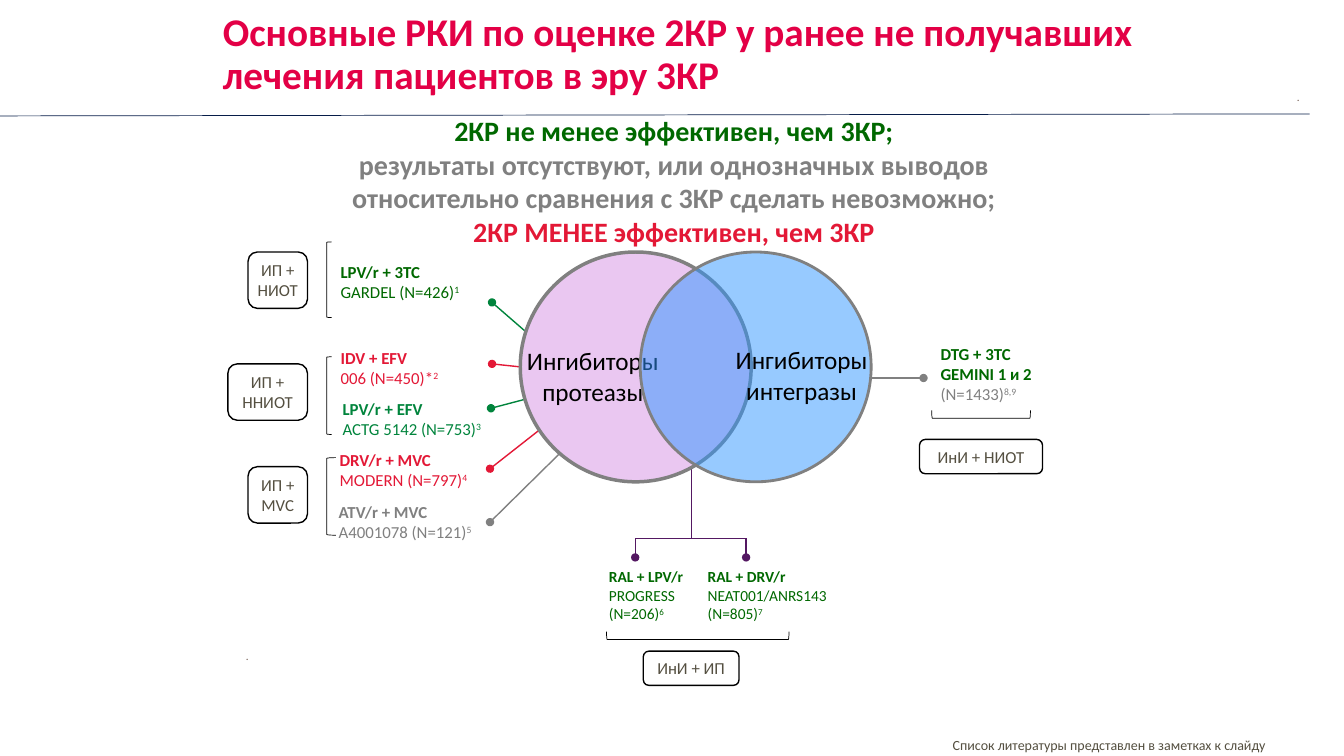
from lxml import etree
from pptx import Presentation
from pptx.dml.color import RGBColor
from pptx.enum.shapes import MSO_CONNECTOR, MSO_SHAPE
from pptx.enum.text import MSO_ANCHOR, MSO_AUTO_SIZE, PP_ALIGN
from pptx.oxml.ns import qn
from pptx.util import Inches, Pt

LEFT, CENTER, RIGHT = PP_ALIGN.LEFT, PP_ALIGN.CENTER, PP_ALIGN.RIGHT
TOP, MIDDLE, BOTTOM = MSO_ANCHOR.TOP, MSO_ANCHOR.MIDDLE, MSO_ANCHOR.BOTTOM
OVAL, PILL = MSO_SHAPE.OVAL, MSO_SHAPE.ROUNDED_RECTANGLE
OPEN_RIGHT, OPEN_LEFT = MSO_SHAPE.LEFT_BRACKET, MSO_SHAPE.RIGHT_BRACKET

FONT = "Calibri"
GREEN, LIME, RED, GRAY = "006800", "00843C", "E31836", "808080"
PURPLE, BROWN, TAN, BLACK, NAVY = "541862", "544F40", "775F55", "000000", "071D49"

TITLE = "Основные РКИ по оценке 2КР у ранее не получавших лечения пациентов в эру 3КР"
VERDICT = [
    [("2КР не менее эффективен, чем 3КР;", GREEN, True)],
    [("результаты отсутствуют, или однозначных выводов\n"
      "относительно сравнения с 3КР сделать невозможно;\n", GRAY, True),
     ("2КР МЕНЕЕ эффективен, чем 3КР", RED, True)],
]
SOURCE = "Список литературы представлен в заметках к слайду"

# box, size, (drug text, colour), (trial text, colour), reference
TRIALS = [
    ((3.28, 2.55, 1.4, 0.5), 12, ("LPV/r + 3TC\n", GREEN), ("GARDEL (N=426)", GREEN), "1"),
    ((3.28, 3.4, 1.19, 0.5), 12, ("IDV + EFV\n", RED), ("006 (N=450)*", RED), "2"),
    ((3.3, 3.91, 1.6, 0.5), 12, ("LPV/r + EFV\n", LIME), ("ACTG 5142 (N=753)", LIME), "3"),
    ((3.27, 4.41, 1.49, 0.5), 12, ("DRV/r + MVC\n", RED), ("MODERN (N=797)", RED), "4"),
    ((3.26, 4.93, 1.55, 0.5), 12, ("ATV/r + MVC\n", GRAY), ("A4001078 (N=121)", GRAY), "5"),
    ((5.94, 5.58, 0.95, 0.66), 11, ("RAL + LPV/r\n", GREEN), ("PROGRESS\n(N=206)", GREEN), "6"),
    ((6.92, 5.58, 1.45, 0.66), 11, ("RAL + DRV/r\n", GREEN),
     ("NEAT001/ANRS143\n(N=805)", GREEN), "7"),
    ((9.23, 3.36, 1.15, 0.71), 12, ("DTG + 3TC\nGEMINI 1 и 2\n", GREEN),
     ("(N=1433)", GRAY), "8,9"),
]
CLASSES = [
    ("ИП + НИОТ", (2.46, 2.5, 0.59, 0.56)),
    ("ИП + ННИОТ", (2.26, 3.61, 0.79, 0.56)),
    ("ИП + MVC", (2.46, 4.63, 0.59, 0.56)),
    ("ИнИ + ИП", (6.38, 6.46, 0.95, 0.34)),
    ("ИнИ + НИОТ", (9.12, 4.36, 1.22, 0.34)),
]
BRACKETS = [
    (OPEN_RIGHT, (3.24, 2.4, 0.05, 0.75), 0),
    (OPEN_RIGHT, (3.24, 3.54, 0.05, 0.77), 0),
    (OPEN_RIGHT, (3.24, 4.54, 0.09, 0.77), 0),
    (OPEN_LEFT, (6.88, 5.4, 0.08, 1.81), 90),
    (OPEN_LEFT, (9.69, 3.62, 0.08, 0.98), 90),
]
# start, end, colour, dot at the end
LINKS = [
    ((5.26, 3.33), (4.88, 3), LIME, True),
    ((5.16, 3.64), (4.88, 3.61), RED, True),
    ((5.25, 3.95), (4.87, 4.05), LIME, True),
    ((5.37, 4.25), (4.86, 4.65), RED, True),
    ((5.55, 4.5), (4.86, 5.18), GRAY, True),
    ((6.86, 4.65), (6.86, 5.34), PURPLE, False),
    ((6.3, 5.34), (7.4, 5.34), PURPLE, False),
    ((6.3, 5.34), (6.3, 5.53), PURPLE, True),
    ((7.4, 5.34), (7.4, 5.53), PURPLE, True),
    ((8.62, 3.75), (9.16, 3.75), GRAY, True),
]
# label lines, label box, circle left, fill, opacity in %, line width
CIRCLES = [
    (["Ингибиторы", "протеазы"], (5.09, 3.38, 1.58, 0.71), 5.16, "EAC7F1", 100, 2.5),
    (["Ингибиторы", "интегразы"], (7.16, 3.37, 1.58, 0.71), 6.35, "3096FF", 50, 2),
]


def rgb(code):
    return RGBColor.from_string(code)


def inches(box):
    return [Inches(v) for v in box]


def write(frame, paras, size, align=LEFT, anchor=TOP, margins=(0.1, 0.05), wrap=True, grow=True):
    """Fill a text frame; each paragraph is a list of (text, colour, bold[, raised])."""
    frame.word_wrap = wrap
    frame.auto_size = MSO_AUTO_SIZE.SHAPE_TO_FIT_TEXT if grow else MSO_AUTO_SIZE.NONE
    frame.vertical_anchor = anchor
    frame.margin_left = frame.margin_right = Inches(margins[0])
    frame.margin_top = frame.margin_bottom = Inches(margins[1])
    for i, runs in enumerate(paras):
        para = frame.add_paragraph() if i else frame.paragraphs[0]
        para.alignment = align
        para.font.name, para.font.size = FONT, Pt(size)
        for text, color, bold, *raised in runs:
            for j, line in enumerate(text.split("\n")):
                if j:
                    para.add_line_break()
                if line:
                    run = para.add_run()
                    run.text = line
                    run.font.bold = bold
                    run.font.color.rgb = rgb(color)
                    if raised:
                        run.font._element.set("baseline", "30000")


def label(box, paras, size, **style):
    write(slide.shapes.add_textbox(*inches(box)).text_frame, paras, size, **style)


def shape(kind, box, color, width, fill=None):
    item = slide.shapes.add_shape(kind, *inches(box))
    item.shadow.inherit = False
    item.line.color.rgb, item.line.width = rgb(color), Pt(width)
    if fill:
        item.fill.solid()
        item.fill.fore_color.rgb = rgb(fill)
    else:
        item.fill.background()
    return item


def link(start, end, color, dot=False, width=1):
    item = slide.shapes.add_connector(MSO_CONNECTOR.STRAIGHT, *inches(start + end))
    item.line.color.rgb, item.line.width = rgb(color), Pt(width)
    props = item._element.spPr
    if dot:
        etree.SubElement(props.find(qn("a:ln")), qn("a:tailEnd"), type="oval")
    etree.SubElement(props, qn("a:effectLst"))


deck = Presentation()
deck.slide_width, deck.slide_height = Inches(13.33), Inches(7.5)
slide = deck.slides.add_slide(deck.slide_layouts[5])

link((0, 1.15), (12.99, 1.13), NAVY, width=0.5)
title = slide.shapes.title
title.left, title.top, title.width, title.height = inches((2.11, 0.09, 10.44, 0.92))
write(title.text_frame, [[(TITLE, "E30046", True)]], 28, anchor=MIDDLE, grow=False)
title.text_frame.paragraphs[0].line_spacing = 0.9

for start, end, color, dot in LINKS:
    link(start, end, color, dot)
for lines, box, left, fill, opacity, width in CIRCLES:
    disc = shape(OVAL, (left, 2.5, 2.29, 2.28), GRAY, width, fill)
    if opacity < 100:
        tint = disc._element.spPr.find(qn("a:solidFill"))[0]
        etree.SubElement(tint, qn("a:alpha"), val=str(opacity * 1000))
    label(box, [[(line, BLACK, False)] for line in lines], 18, align=CENTER, wrap=False)

for kind, box, turn in BRACKETS:
    shape(kind, box, BLACK, 0.5).rotation = turn
for name, box in CLASSES:
    pill = shape(PILL, box, BLACK, 1)
    write(pill.text_frame, [[(name, BROWN, False)]], 12, CENTER, MIDDLE, (0, 0.05))
for box, size, drug, trial, ref in TRIALS:
    runs = [(*drug, True), (*trial, False), (ref, trial[1], False, True)]
    label(box, [runs], size, wrap=False)

label((0.67, 1.12, 12.03, 1.35), VERDICT, 20, align=CENTER, anchor=MIDDLE, margins=(0, 0))
label((6.19, 0.9, 6.7, 0.12), [[(".", TAN, False)]], 8, align=RIGHT, margins=(0, 0), grow=False)
label((2.34, 6.39, 2.47, 0.24), [[(".", TAN, False)]], 8)
label((8.87, 7.35, 3.68, 0.12), [[(SOURCE, BROWN, False)]], 10,
      align=RIGHT, anchor=BOTTOM, margins=(0, 0), grow=False)

deck.save("out.pptx")
